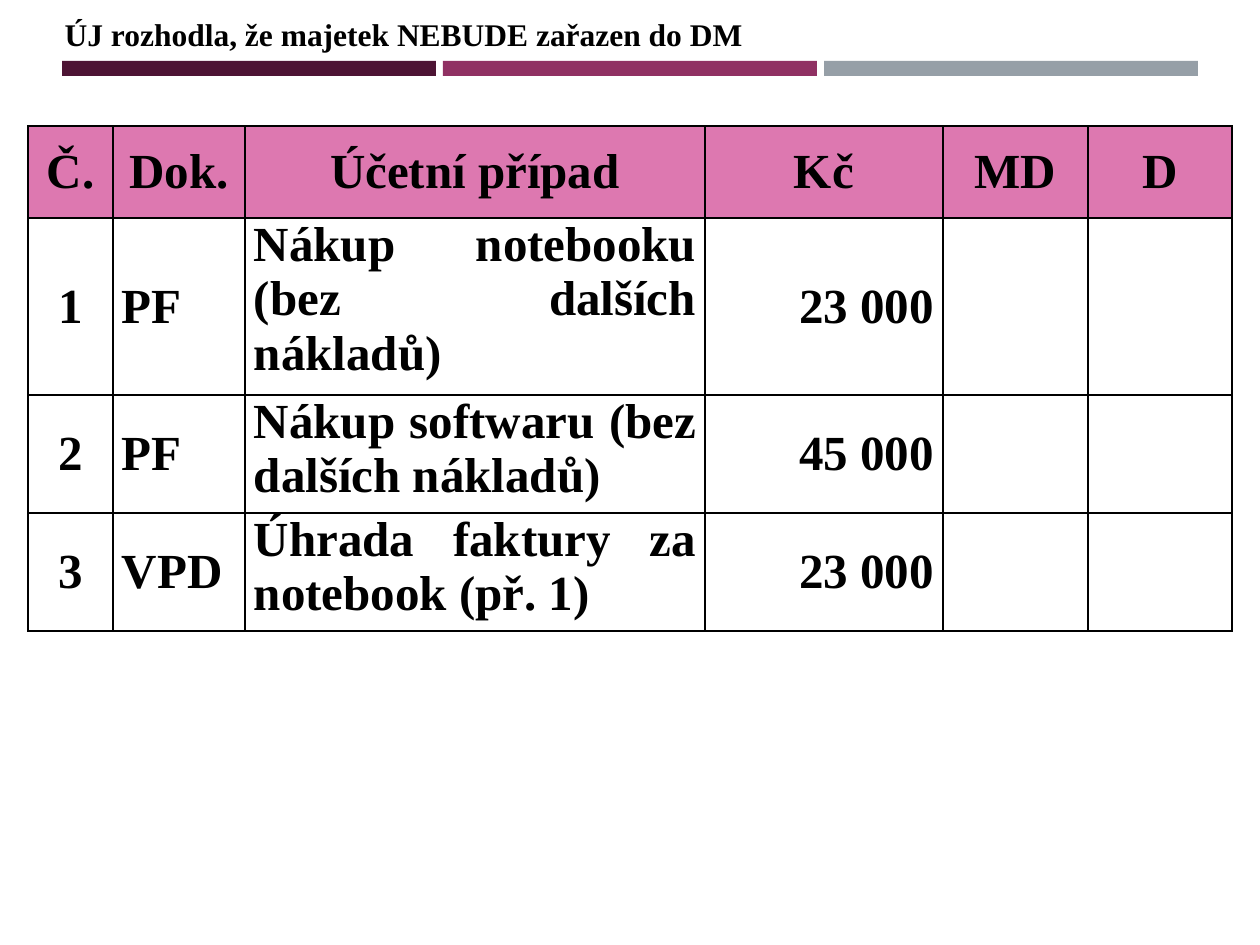
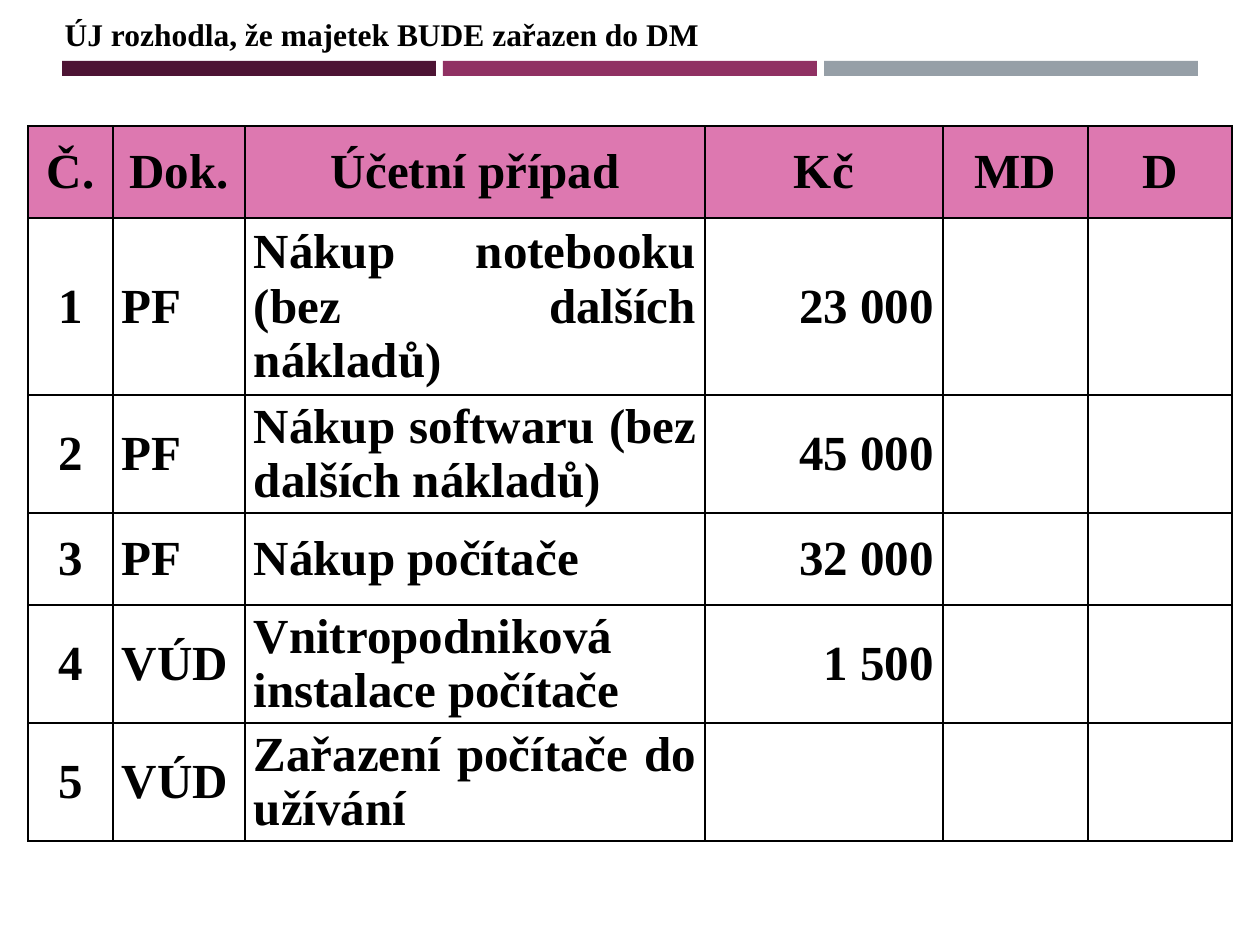
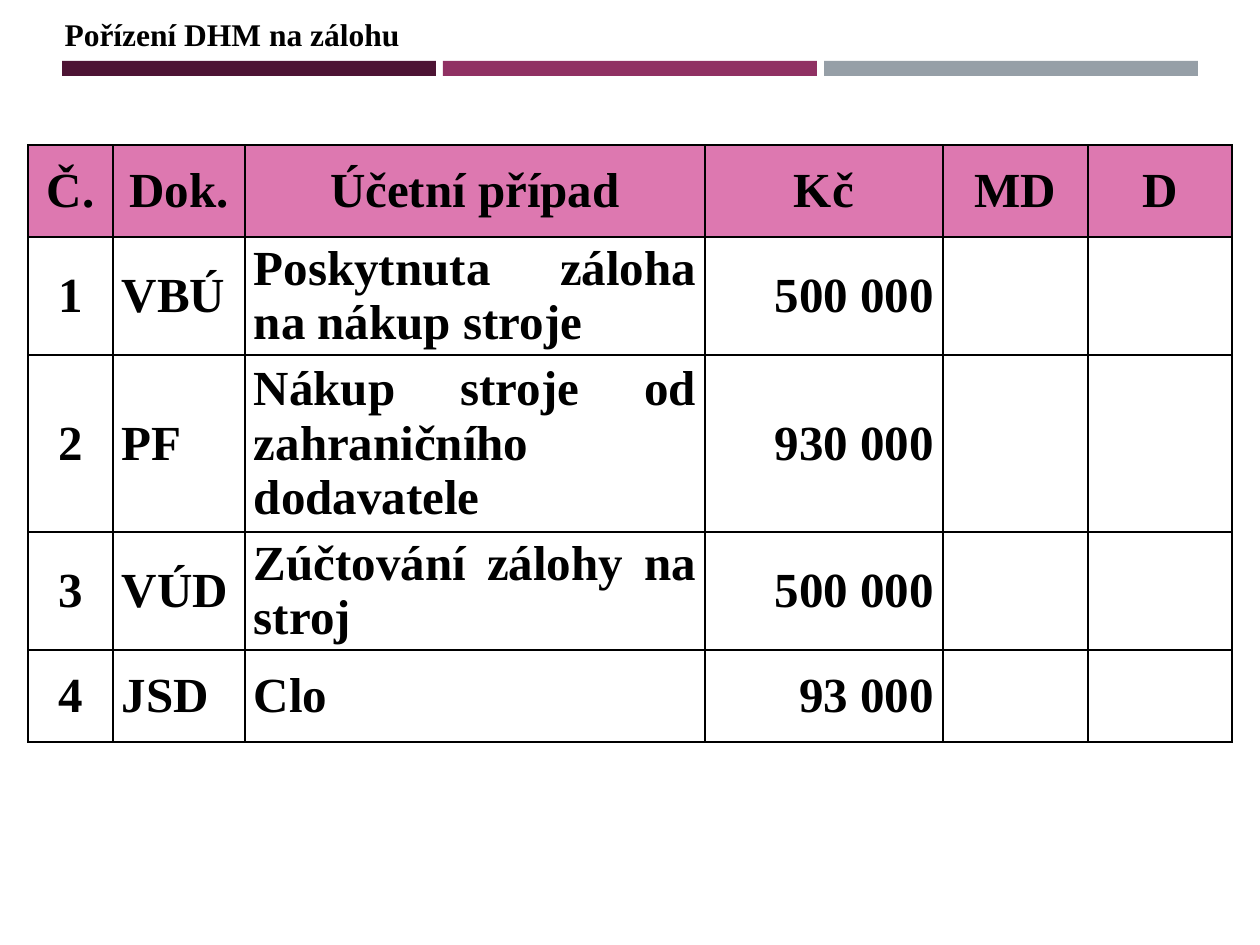
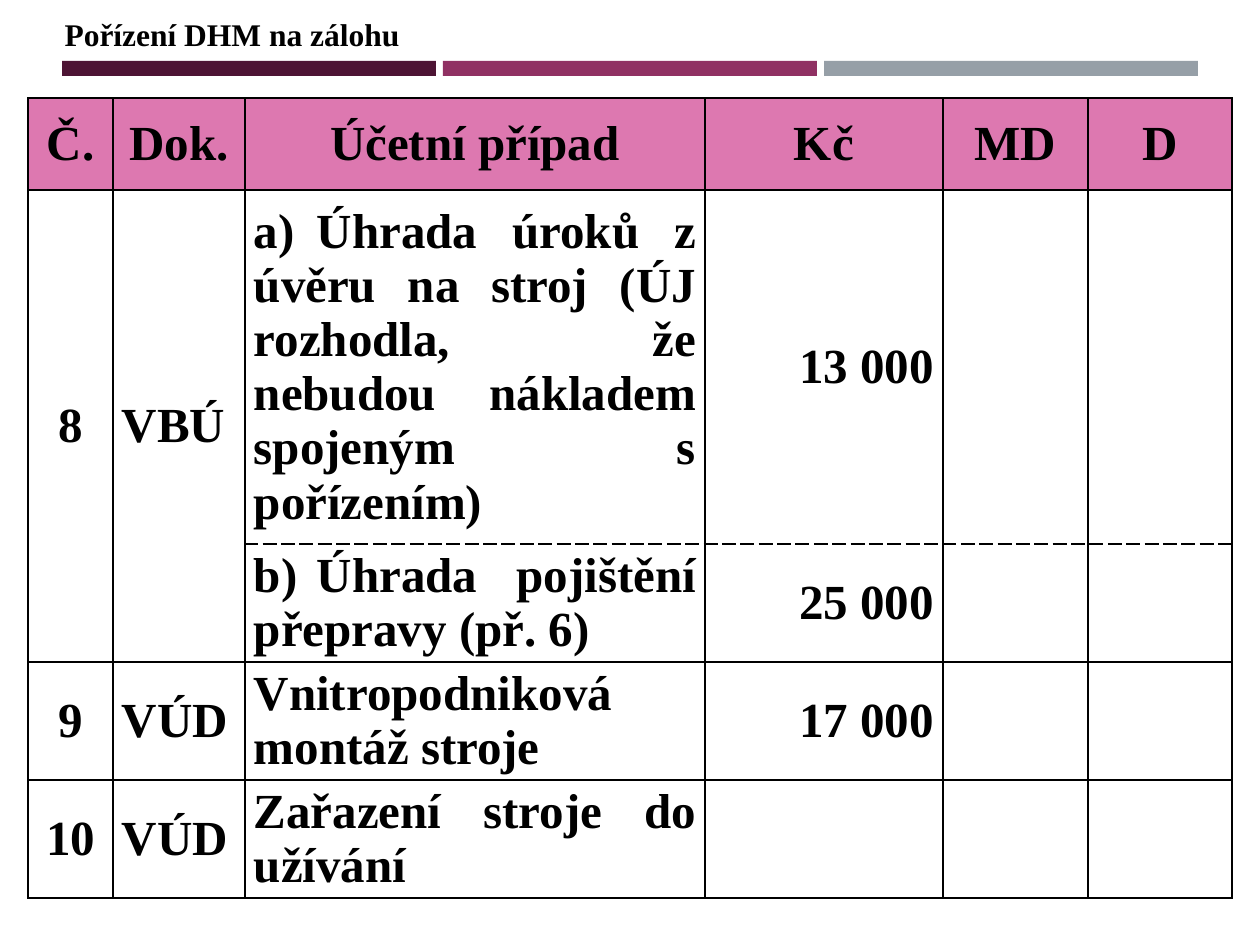
"""Build four accounting exercise slides, each with a title and a posting table."""
from lxml import etree
from pptx import Presentation
from pptx import util as u
from pptx.dml.color import RGBColor
from pptx.enum import shapes, text
from pptx.oxml.ns import qn

FONT = "Times New Roman"
BLACK = RGBColor(0x00, 0x00, 0x00)
PINK = RGBColor(0xDD, 0x78, 0xB0)
BANDS = [RGBColor(0x4D, 0x14, 0x34), RGBColor(0x90, 0x31, 0x63), RGBColor(0x96, 0x9F, 0xA7)]

TOP, MIDDLE = text.MSO_ANCHOR.TOP, text.MSO_ANCHOR.MIDDLE
LEFT, CENTER = text.PP_ALIGN.LEFT, text.PP_ALIGN.CENTER
RIGHT, JUSTIFY = text.PP_ALIGN.RIGHT, text.PP_ALIGN.JUSTIFY

HEADER = ("Č.", "Dok.", "Účetní případ", "Kč", "MD", "D")
COLUMNS = (85, 132, 460, 238, 145, 144)
ALIGNS = (CENTER, LEFT, JUSTIFY, RIGHT, CENTER, CENTER)
EVENT = 2
TABLE_LEFT, ROW_MIN, LINE_HEIGHT, CELL_INSET, TAB = 28, 92, 59, 9, 63

# Each row: number, document, event, amount, lines of text; no number continues the row above.
SLIDES = [
    {"title": "ÚJ rozhodla, že majetek NEBUDE zařazen do DM", "width": 711,
     "top": 126, "anchor": TOP,
     "rows": [("1", "PF", "Nákup notebooku (bez dalších nákladů)", "23 000", 3),
              ("2", "PF", "Nákup softwaru (bez dalších nákladů)", "45 000", 2),
              ("3", "VPD", "Úhrada faktury za notebook (př. 1)", "23 000", 2)]},
    {"title": "ÚJ rozhodla, že majetek BUDE zařazen do DM", "width": 667,
     "top": 126, "anchor": MIDDLE,
     "rows": [("1", "PF", "Nákup notebooku (bez dalších nákladů)", "23 000", 3),
              ("2", "PF", "Nákup softwaru (bez dalších nákladů)", "45 000", 2),
              ("3", "PF", "Nákup počítače", "32 000", 1),
              ("4", "VÚD", "Vnitropodniková instalace počítače", "1 500", 2),
              ("5", "VÚD", "Zařazení počítače do užívání", "", 2)]},
    {"title": "Pořízení DHM na zálohu", "width": 364,
     "top": 145, "anchor": MIDDLE,
     "rows": [("1", "VBÚ", "Poskytnuta záloha na nákup stroje", "500 000", 2),
              ("2", "PF", "Nákup stroje od zahraničního dodavatele", "930 000", 3),
              ("3", "VÚD", "Zúčtování zálohy na stroj", "500 000", 2),
              ("4", "JSD", "Clo", "93 000", 1)]},
    {"title": "Pořízení DHM na zálohu", "width": 364,
     "top": 98, "anchor": MIDDLE,
     "rows": [("8", "VBÚ", "a)\tÚhrada úroků z úvěru na stroj (ÚJ rozhodla, že nebudou "
               "nákladem spojeným s pořízením)", "13 000", 6),
              ("", "", "b)\tÚhrada pojištění přepravy (př. 6)", "25 000", 2),
              ("9", "VÚD", "Vnitropodniková montáž stroje", "17 000", 2),
              ("10", "VÚD", "Zařazení stroje do užívání", "", 2)]},
]


def px(n):
    return u.Emu(round(n * 914400 / 126))


def set_text(p, value, size, align):
    p.text = value
    p.alignment = align
    for r in p.runs:
        r.font.name, r.font.size, r.font.bold = FONT, u.Pt(size), True
        r.font.color.rgb = BLACK


def add_bands(slide, layout):
    for i, color in enumerate(BANDS):
        sp = slide.shapes.add_shape(shapes.MSO_SHAPE.RECTANGLE,
                                    px(62 + 381 * i), px(61), px(374), px(15))
        sp.shadow.inherit = False
        sp.fill.solid()
        sp.fill.fore_color.rgb = color
        sp.line.fill.background()
        layout.shapes.element.append(sp.element)


def add_title(slide, title, width):
    sp = slide.shapes.title
    sp.left, sp.top, sp.width, sp.height = px(52), px(9), px(width), px(50)
    tf = sp.text_frame
    tf.word_wrap = False
    tf.auto_size = text.MSO_AUTO_SIZE.SHAPE_TO_FIT_TEXT
    tf.vertical_anchor = TOP
    set_text(tf.paragraphs[0], title, 18, LEFT)


def set_borders(cell, dashed):
    tc_pr = cell._tc.get_or_add_tcPr()
    for i, side in enumerate("LRTB"):
        ln = etree.Element(qn(f"a:ln{side}"), w=str(u.Pt(1)))
        fill = etree.SubElement(ln, qn("a:solidFill"))
        etree.SubElement(fill, qn("a:srgbClr"), val=str(BLACK))
        etree.SubElement(ln, qn("a:prstDash"), val="sysDash" if side in dashed else "solid")
        tc_pr.insert(i, ln)


def format_cell(cell, value, align, anchor, dashed):
    cell.margin_left = cell.margin_right = px(CELL_INSET)
    cell.margin_top = cell.margin_bottom = 0
    cell.vertical_anchor = anchor
    p = cell.text_frame.paragraphs[0]
    set_text(p, value, 28, align)
    if "\t" in value:
        tabs = etree.SubElement(p._p.get_or_add_pPr(), qn("a:tabLst"))
        etree.SubElement(tabs, qn("a:tab"), pos=str(px(TAB)), algn="l")
    set_borders(cell, dashed)


def add_posting_table(slide, top, anchor, rows):
    heights = [ROW_MIN] + [max(ROW_MIN, LINE_HEIGHT * row[-1]) for row in rows]
    table = slide.shapes.add_table(len(heights), len(COLUMNS), px(TABLE_LEFT), px(top),
                                   px(sum(COLUMNS)), px(sum(heights))).table
    table.first_row = table.horz_banding = False
    for column, width in zip(table.columns, COLUMNS):
        column.width = px(width)
    for row, height in zip(table.rows, heights):
        row.height = px(height)

    for c, value in enumerate(HEADER):
        cell = table.cell(0, c)
        format_cell(cell, value, CENTER, MIDDLE, "")
        cell.fill.solid()
        cell.fill.fore_color.rgb = PINK

    for i, row in enumerate(rows):
        continues = not row[0]
        continued = i + 1 < len(rows) and not rows[i + 1][0]
        dashed = "T" * continues + "B" * continued
        for c, value in enumerate((*row[:-1], "", "")):
            cell = table.cell(i + 1, c)
            format_cell(cell, value, ALIGNS[c], anchor if c == EVENT else MIDDLE,
                        dashed if c >= EVENT else "")
            cell.fill.background()
            if continues and c < EVENT:
                table.cell(i, c).merge(cell)


def main():
    prs = Presentation()
    prs.slide_width, prs.slide_height = px(1260), px(945)
    layout = prs.slide_layouts.get_by_name("Title Only")
    for i, content in enumerate(SLIDES):
        slide = prs.slides.add_slide(layout)
        if i == 0:
            add_bands(slide, layout)
        add_title(slide, content["title"], content["width"])
        add_posting_table(slide, content["top"], content["anchor"], content["rows"])
    prs.save("out.pptx")


if __name__ == "__main__":
    main()
